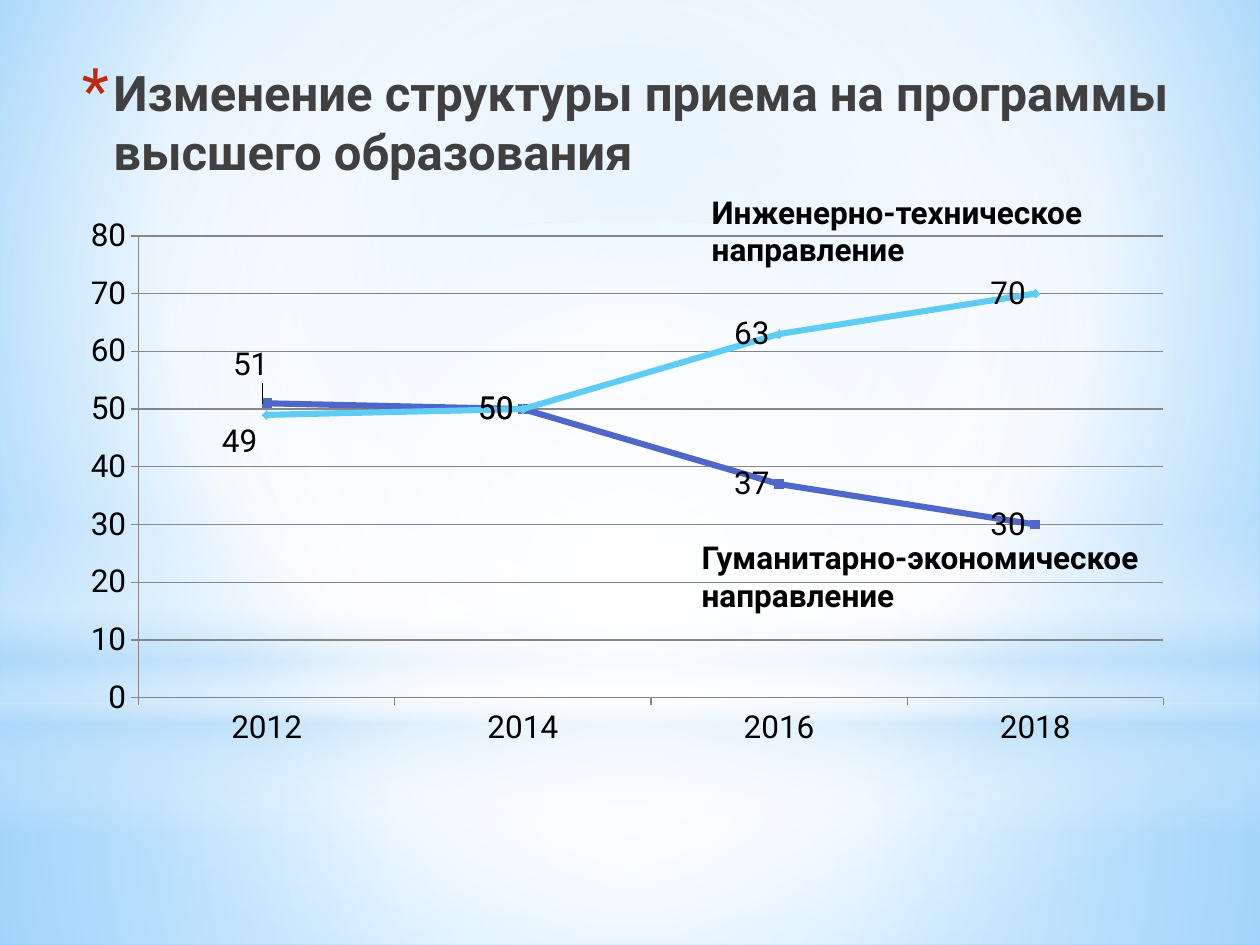
from lxml import etree
from pptx import Presentation
from pptx.chart.data import CategoryChartData as Data
from pptx.dml.color import RGBColor as RGB
from pptx.enum.chart import XL_CHART_TYPE as Kind, XL_LABEL_POSITION as Pos
from pptx.enum.chart import XL_MARKER_STYLE as Mark, XL_TICK_MARK as Tick
from pptx.enum.shapes import MSO_SHAPE as Shape
from pptx.enum.text import MSO_ANCHOR as Anchor, MSO_AUTO_SIZE as Auto, PP_ALIGN as Align
from pptx.oxml import parse_xml
from pptx.oxml.ns import nsdecls, qn
from pptx.util import Inches, Pt

FONT = "Roboto"
BLACK = RGB(0x00, 0x00, 0x00)
DARK = RGB(0x40, 0x40, 0x40)
RED = RGB(0xC3, 0x26, 0x0C)
GRAY = RGB(0x86, 0x86, 0x86)
BLUE = RGB(0x4E, 0x67, 0xC8)
CYAN = RGB(0x5E, 0xCC, 0xF3)
WHITE = RGB(0xFF, 0xFF, 0xFF)
PALE = RGB(0xB4, 0xDC, 0xFA)
SKY = RGB(0x9E, 0xD5, 0xFF)
DEEP = RGB(0x5B, 0xB9, 0xFF)
MID = (50, 50, 50, 50)


def blend(stops, focus=None):
    parts = "".join(
        f'<a:gs pos="{at * 1000}"><a:srgbClr val="{tint}">'
        f'<a:alpha val="{alpha * 1000}"/></a:srgbClr></a:gs>'
        for at, tint, alpha in stops)
    if focus:
        left, top, right, low = (n * 1000 for n in focus)
        way = (f'<a:path path="circle"><a:fillToRect l="{left}" t="{top}" '
               f'r="{right}" b="{low}"/></a:path>')
    else:
        way = '<a:lin ang="5400000" scaled="0"/>'
    return parse_xml(f'<a:gradFill {nsdecls("a")} rotWithShape="1">'
                     f'<a:gsLst>{parts}</a:gsLst>{way}</a:gradFill>')


def add_back(slide):
    slide.background.fill.solid()
    props = slide.element.xpath("./p:cSld/p:bg/p:bgPr")[0]
    stops = [(0, SKY, 100), (60, WHITE, 100), (100, DEEP, 100)]
    props.replace(props[0], blend(stops, (20, 10, 20, 60)))


def add_glow(slide, kind, top, height, stops, focus=None):
    glow = slide.shapes.add_shape(kind, 0, Inches(top), Inches(10), Inches(height))
    glow.shadow.inherit = False
    glow.line.fill.background()
    glow.fill.solid()
    old = glow.element.spPr.find(qn("a:solidFill"))
    glow.element.spPr.replace(old, blend(stops, focus))


def add_run(para, text, size, tint):
    run = para.add_run()
    run.text = text
    font = run.font
    font.name, font.size, font.bold = FONT, Pt(size), True
    font.color.rgb = tint


def set_title(slide, text):
    title = slide.shapes.title
    slide.shapes.element.append(title.element)
    title.left, title.top = Inches(0.55), Inches(0.31)
    title.width, title.height = Inches(8.98), Inches(1.17)
    frame = title.text_frame
    frame.word_wrap = True
    frame.auto_size = Auto.NONE
    frame.vertical_anchor = Anchor.BOTTOM
    para = frame.paragraphs[0]
    para.alignment = Align.LEFT
    props = para._p.get_or_add_pPr()
    props.set("marL", str(Inches(0.25)))
    props.set("indent", str(-Inches(0.25)))
    tint = etree.SubElement(props, qn("a:buClr"))
    etree.SubElement(tint, qn("a:srgbClr"), val=str(RED))
    etree.SubElement(props, qn("a:buSzPct"), val="128000")
    etree.SubElement(props, qn("a:buFont"), typeface=FONT)
    etree.SubElement(props, qn("a:buChar"), char="*")
    add_run(para, text, 28, DARK)


def place(x, y, size=None):
    inner, modes, dims = "", "", ""
    if size:
        inner = '<c:layoutTarget val="inner"/>'
        modes = '<c:xMode val="edge"/><c:yMode val="edge"/>'
        dims = f'<c:w val="{size[0]}"/><c:h val="{size[1]}"/>'
    return parse_xml(f'<c:layout {nsdecls("c")}><c:manualLayout>{inner}{modes}'
                     f'<c:x val="{x}"/><c:y val="{y}"/>{dims}'
                     '</c:manualLayout></c:layout>')


def style_line(line, tint, mark, size):
    line.smooth = False
    line.format.line.color.rgb = tint
    line.format.line.width = Pt(3.5)
    line.marker.style, line.marker.size = mark, size
    line.marker.format.fill.solid()
    line.marker.format.fill.fore_color.rgb = tint
    line.marker.format.line.color.rgb = tint
    line.points[0].data_label.position = Pos.LEFT
    line.data_labels.show_value = True
    line.data_labels.position = Pos.LEFT


def add_lines(slide):
    data = Data()
    data.categories = ["2012", "2014", "2016", "2018"]
    data.add_series("Series 1", (51, 50, 37, 30))
    data.add_series("Series 2", (49, 50, 63, 70))
    chart = slide.shapes.add_chart(
        Kind.LINE_MARKERS, Inches(0.55), Inches(1.64),
        Inches(8.87), Inches(4.38), data).chart
    chart.has_legend = chart.has_title = False
    chart.font.name, chart.font.size = FONT, Pt(18)
    chart.font.color.rgb = BLACK
    plot = chart.plots[0]
    plot.vary_by_categories = False
    for axis in (chart.category_axis, chart.value_axis):
        axis.major_tick_mark = Tick.OUTSIDE
        axis.minor_tick_mark = Tick.NONE
        axis.format.line.color.rgb = GRAY
    axis = chart.value_axis
    axis.minimum_scale, axis.maximum_scale, axis.major_unit = 0, 80, 10
    axis.has_major_gridlines = True
    axis.major_gridlines.format.line.color.rgb = GRAY
    style_line(plot.series[0], BLUE, Mark.SQUARE, 5)
    style_line(plot.series[1], CYAN, Mark.DIAMOND, 5)
    area = chart.element.xpath(".//c:plotArea")[0]
    for old in area.findall(qn("c:layout")):
        area.remove(old)
    area.insert(0, place(0.062, 0.053, (0.917, 0.837)))
    labels = chart.element.xpath(".//c:dLbl")
    for label, shift in zip(labels, ((0.01, -0.07), (0.0, 0.05))):
        label.insert(1, place(*shift))


def add_note(slide, left, top, text):
    box = slide.shapes.add_textbox(Inches(left), Inches(top), Inches(4.3), Inches(0.71))
    frame = box.text_frame
    frame.word_wrap = True
    frame.auto_size = Auto.SHAPE_TO_FIT_TEXT
    add_run(frame.paragraphs[0], text, 18, BLACK)


def main():
    deck = Presentation()
    deck.slide_width, deck.slide_height = Inches(10), Inches(7.5)
    slide = deck.slides.add_slide(deck.slide_layouts[5])
    add_back(slide)
    add_glow(slide, Shape.RECTANGLE, 5.58, 1.92,
             [(0, WHITE, 91), (37, WHITE, 76), (100, PALE, 79)], MID)
    add_glow(slide, Shape.RECTANGLE, 0, 5.58,
             [(0, WHITE, 89), (48, WHITE, 62), (100, PALE, 79)], MID)
    add_glow(slide, Shape.RECTANGLE, 4.12, 2.5,
             [(0, WHITE, 0), (29, WHITE, 30), (45, PALE, 40),
              (55, WHITE, 26), (65, PALE, 60), (100, WHITE, 0)])
    add_glow(slide, Shape.OVAL, 1.75, 5.58, [(0, WHITE, 100), (56, WHITE, 0)], MID)
    set_title(slide, "Изменение структуры приема на программы высшего образования")
    add_lines(slide)
    add_note(slide, 5.55, 1.48, "Инженерно-техническое направление")
    add_note(slide, 5.47, 4.22, "Гуманитарно-экономическое направление")
    deck.save("out.pptx")


if __name__ == "__main__":
    main()
